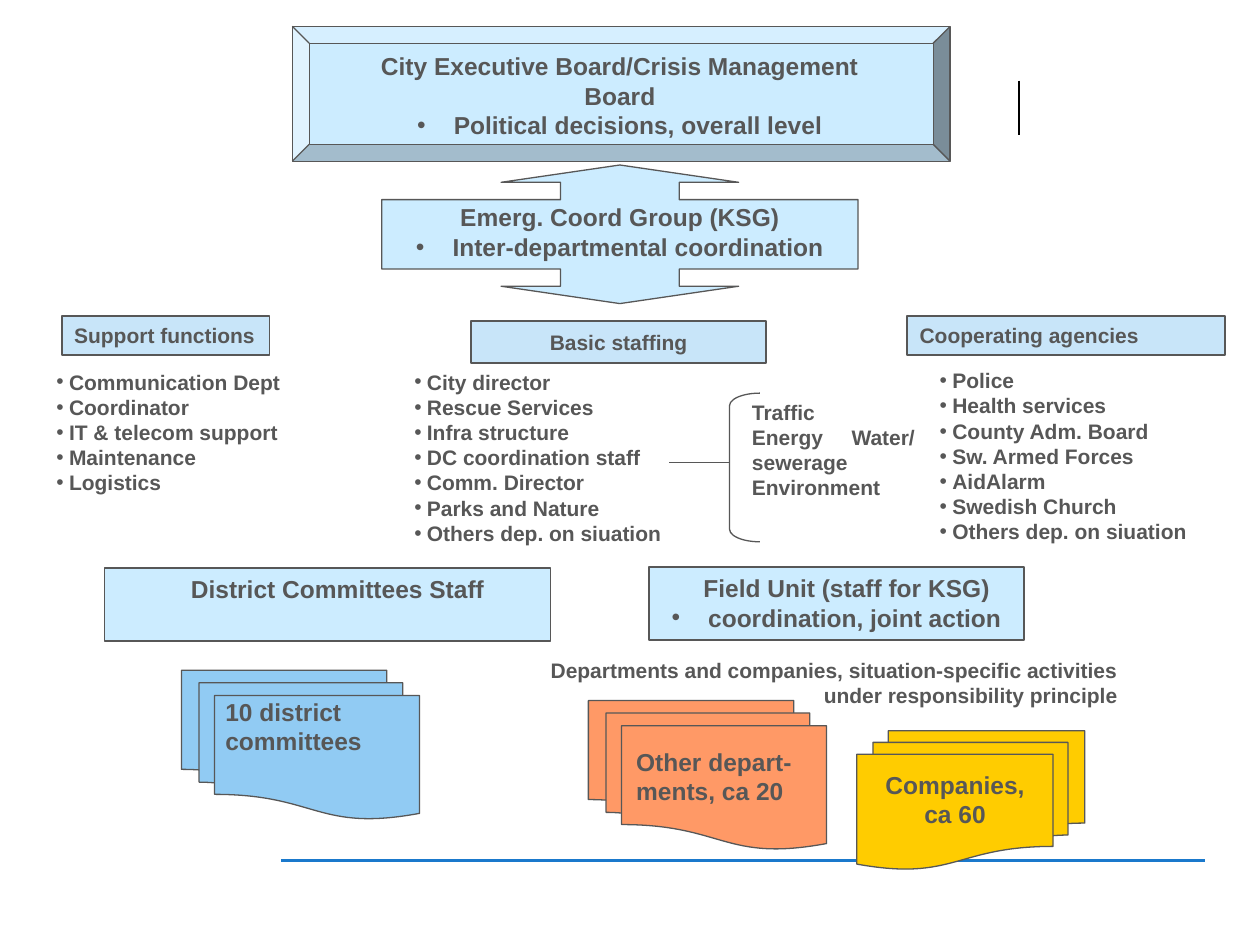
from lxml.etree import SubElement
from pptx import Presentation
from pptx.dml.color import RGBColor
from pptx.enum.shapes import MSO_CONNECTOR, MSO_SHAPE
from pptx.enum.text import MSO_ANCHOR, PP_ALIGN
from pptx.oxml.ns import qn
from pptx.util import Inches, Pt

INK, PALE, HEADER = "575757", "CCECFF", "C8E5F9"
LEFT, CENTER, RIGHT = PP_ALIGN.LEFT, PP_ALIGN.CENTER, PP_ALIGN.RIGHT
TOP, MIDDLE = MSO_ANCHOR.TOP, MSO_ANCHOR.MIDDLE

RULES = [
    ((8.09, 0.64), (8.09, 1.07), "000000", 1),
    ((2.23, 6.83), (9.56, 6.83), "1A79CC", 2),
]
BRACKET_STEM = ((5.79, 3.67), (5.31, 3.67), INK, 0.75)

HEADERS = [
    ((0.49, 2.51, 1.65, 0.31), "Support functions", LEFT, TOP),
    ((7.2, 2.51, 2.52, 0.31), "Cooperating agencies", LEFT, TOP),
    ((3.74, 2.55, 2.34, 0.33), "Basic staffing", CENTER, MIDDLE),
]

MEMBERS = [
    ((0.35, 2.88, 2.2, 1.3), [
        "Communication Dept", "Coordinator", "IT & telecom support",
        "Maintenance", "Logistics"]),
    ((3.19, 2.88, 2.2, 1.5), [
        "City director", "Rescue Services", "Infra structure",
        "DC coordination staff", "Comm. Director", "Parks and Nature",
        "Others dep. on siuation"]),
    ((7.36, 2.87, 2.32, 1.5), [
        "Police", "Health services", "County Adm. Board", "Sw. Armed Forces",
        "AidAlarm", "Swedish Church", "Others dep. on siuation"]),
]

STAFFS = [
    ((0.83, 4.51, 3.54, 0.58), ["District Committees Staff"], []),
    ((5.15, 4.5, 2.98, 0.58), ["Field Unit (staff for KSG)"],
     ["coordination, joint action"]),
]

STACKS = [
    ((1.44, 5.32, 1.89, 1.18), "91CBF3", True,
     (1.69, 5.48, 1.73, 0.57), ["10 district committees"], LEFT, TOP),
    ((4.67, 5.56, 1.89, 1.18), "FF9966", True,
     (4.95, 5.88, 1.62, 0.57), ["Other depart-ments, ca 20"], LEFT, TOP),
    ((6.8, 5.8, 1.81, 1.1), "FFCC00", False,
     (6.87, 6.11, 1.42, 0.47), ["Companies,", "ca 60"], CENTER, MIDDLE),
]

BOARDS = [
    (MSO_SHAPE.BEVEL, (2.32, 0.21, 5.22, 1.07), [0.125],
     (2.87, 0.36, 4.1, 0.8), TOP,
     ["City Executive Board/Crisis Management", "Board"],
     ["Political decisions, overall level"]),
    (MSO_SHAPE.UP_DOWN_ARROW_CALLOUT, (3.03, 1.31, 3.78, 1.1),
     [0.857, 0.857, 0.125, 0.5],
     (2.95, 1.55, 3.94, 0.58), MIDDLE,
     ["Emerg. Coord Group (KSG)"], ["Inter-departmental coordination"]),
]

PRINCIPLE = ["Departments and companies, situation-specific activities",
             "under responsibility principle"]
INFRASTRUCTURE = ["Traffic", "Energy\tWater/", "sewerage", "Environment"]


def color(value):
    return RGBColor.from_string(value)


def add_line(start, end, ink, weight):
    line = slide.shapes.add_connector(
        MSO_CONNECTOR.STRAIGHT, *map(Inches, start + end))
    line.line.color.rgb = color(ink)
    line.line.width = Pt(weight)
    SubElement(line._element.spPr, qn("a:effectLst"))


def add_box(kind, place, fill, weight, adjustments=()):
    box = slide.shapes.add_shape(kind, *map(Inches, place))
    box.shadow.inherit = False
    if fill:
        box.fill.solid()
        box.fill.fore_color.rgb = color(fill)
    else:
        box.fill.background()
    box.line.color.rgb = color(INK)
    box.line.width = Pt(weight)
    for index, value in enumerate(adjustments):
        box.adjustments[index] = value
    return box


def add_label(place):
    return slide.shapes.add_textbox(*map(Inches, place))


def write(box, size, lines=(), points=(), align=LEFT, anchor=TOP,
          hang=0.1, margin=0, tab=None):
    frame = box.text_frame
    frame.word_wrap = True
    frame.vertical_anchor = anchor
    frame.text = "\n".join([*lines, *points])
    for index, paragraph in enumerate(frame.paragraphs):
        paragraph.alignment = align
        props = paragraph._p.get_or_add_pPr()
        if index >= len(lines):
            props.set("marL", str(Inches(hang)))
            props.set("indent", str(-Inches(hang)))
            SubElement(props, qn("a:buFont"), typeface="Arial")
            SubElement(props, qn("a:buChar"), char="•")
        elif margin:
            props.set("marL", str(Inches(margin)))
        if tab:
            stops = SubElement(props, qn("a:tabLst"))
            SubElement(stops, qn("a:tab"), pos=str(Inches(tab)), algn="l")
        for run in paragraph.runs:
            run.font.name = "Arial"
            run.font.size = Pt(size)
            run.font.bold = True
            run.font.color.rgb = color(INK)


deck = Presentation()
deck.slide_width, deck.slide_height = Inches(10), Inches(7.5)
slide = deck.slides.add_slide(deck.slide_layouts[6])

for rule in RULES:
    add_line(*rule)

for place, title, align, anchor in HEADERS:
    header = add_box(MSO_SHAPE.RECTANGLE, place, HEADER, 1)
    write(header, 12, [title], align=align, anchor=anchor)
    header.text_frame.word_wrap = False

for place, members in MEMBERS:
    write(add_label(place), 12, points=members)

for place, title, duties in STAFFS:
    staff = add_box(MSO_SHAPE.RECTANGLE, place, PALE, 1)
    write(staff, 14, title, duties, CENTER, hang=0.29, margin=0.16)

write(add_label((4.2, 5.17, 4.77, 0.5)), 12, PRINCIPLE, align=RIGHT)

for place, fill, flipped, label_place, lines, align, anchor in STACKS:
    stack = add_box(MSO_SHAPE.FLOWCHART_MULTIDOCUMENT, place, fill, 0.75)
    if flipped:
        stack._element.spPr.xfrm.set("flipH", "1")
    write(add_label(label_place), 14, lines, align=align, anchor=anchor)

for kind, place, adjustments, label_place, anchor, title, duties in BOARDS:
    add_box(kind, place, PALE, 0.75, adjustments)
    write(add_label(label_place), 14, title, duties, CENTER, anchor, hang=0.29)

add_box(MSO_SHAPE.LEFT_BRACKET, (5.79, 3.12, 0.24, 1.18), None, 0.75, [0.417])
write(add_label((5.87, 3.12, 1.5, 1.1)), 12, INFRASTRUCTURE, tab=0.79)
add_line(*BRACKET_STEM)

deck.save("out.pptx")
